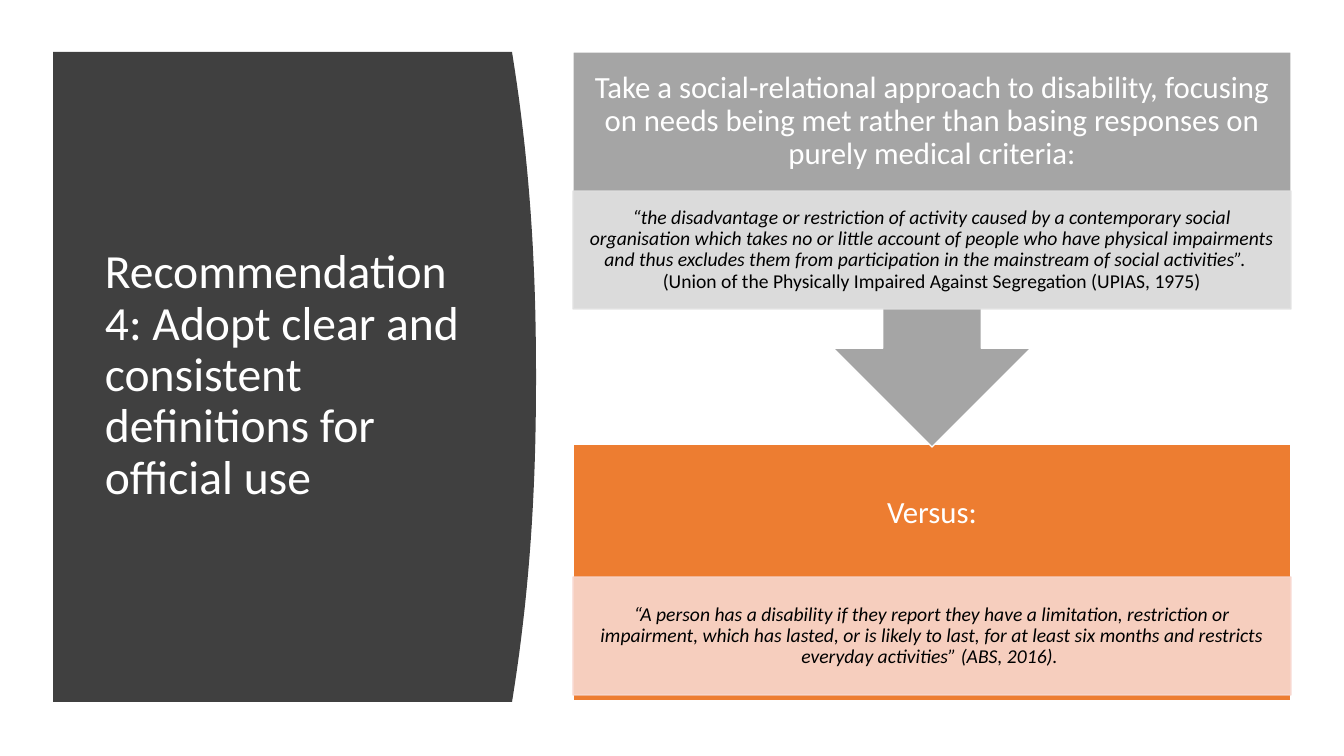
from dataclasses import dataclass

from lxml import etree
from pptx import Presentation
from pptx import util as u
from pptx.dml.color import RGBColor
from pptx.enum import shapes, text
from pptx.oxml import ns

EMU_PER_INCH = 914400
PX_PER_INCH = 100.8


@dataclass(frozen=True)
class Theme:
    """Colours, font and type sizes of the slide."""
    font: str = "Calibri"
    title_size: int = 34
    heading_size: int = 22
    quote_size: int = 14
    white: str = "FFFFFF"
    black: str = "000000"
    charcoal: str = "404040"
    grey: str = "A5A5A5"
    pale_grey: str = "E1E1E1"
    orange: str = "ED7D31"
    pale_orange: str = "F8D7CE"


THEME = Theme()
COLUMN_LEFT, COLUMN_WIDTH = 573, 718
HEADING_HEIGHT, QUOTE_HEIGHT = 139, 118


def px(length):
    """Turn pixels into EMU."""
    return u.Emu(round(length * EMU_PER_INCH / PX_PER_INCH))


def paint(shape, fill, line=None):
    """Give a shape a flat fill and an optional thin outline."""
    shape.shadow.inherit = False
    shape.fill.solid()
    shape.fill.fore_color.rgb = RGBColor.from_string(fill)
    if line:
        shape.line.color.rgb = RGBColor.from_string(line)
        shape.line.width = u.Pt(1)
    else:
        shape.line.fill.background()


def make_translucent(shape, percent):
    """Set the opacity of a shape's fill and outline."""
    for colour in shape._element.spPr.iter(ns.qn("a:srgbClr")):
        etree.SubElement(colour, ns.qn("a:alpha"), val=str(percent * 1000))


def write(shape, spans, size, colour, align, insets):
    """Write one paragraph of (words, italic) spans into a shape."""
    frame = shape.text_frame
    frame.word_wrap = True
    frame.vertical_anchor = text.MSO_ANCHOR.MIDDLE
    frame.margin_left = frame.margin_right = px(insets[0])
    frame.margin_top = frame.margin_bottom = px(insets[1])
    para = frame.paragraphs[0]
    para.alignment = align
    para.line_spacing = 0.9
    para.font.name = THEME.font
    para.font.size = u.Pt(size)
    para.font.color.rgb = RGBColor.from_string(colour)
    for words, italic in spans:
        span = para.add_run()
        span.text = words
        span.font.italic = italic


def add_block(page, kind, top, height, fill):
    """Add a column-wide shape with a white outline."""
    block = page.shapes.add_shape(
        kind, px(COLUMN_LEFT), px(top), px(COLUMN_WIDTH), px(height))
    paint(block, fill, THEME.white)
    return block


def add_heading(page, top, words):
    """Add a centred heading over a block."""
    box = page.shapes.add_textbox(
        px(COLUMN_LEFT), px(top), px(COLUMN_WIDTH), px(HEADING_HEIGHT))
    write(box, [(words, False)], THEME.heading_size, THEME.white,
          text.PP_ALIGN.CENTER, (17, 17))


def add_quote(page, top, fill, spans):
    """Add a pale band holding a quotation."""
    band = page.shapes.add_shape(
        shapes.MSO_SHAPE.RECTANGLE,
        px(COLUMN_LEFT), px(top), px(COLUMN_WIDTH), px(QUOTE_HEIGHT))
    paint(band, fill, fill)
    make_translucent(band, 90)
    write(band, spans, THEME.quote_size, THEME.black,
          text.PP_ALIGN.CENTER, (11, 2))


def add_title_panel(page):
    """Add the dark panel with a bowed right edge and the title on it."""
    left, top, bottom, corner, bulge, steps = 53, 52, 702, 512, 24, 40
    edge = []
    for step in range(steps + 1):
        offset = abs(2 * step / steps - 1)
        edge.append((px(corner + bulge * (1 - offset ** 2.2)),
                     px(top + (bottom - top) * step / steps)))
    outline = page.shapes.build_freeform(px(left), px(top))
    outline.add_line_segments(edge + [(px(left), px(bottom))], close=True)
    paint(outline.convert_to_shape(), THEME.charcoal)

    title = page.shapes.add_textbox(px(95), px(112), px(377), px(528))
    words = ("Recommendation 4: Adopt clear and consistent definitions "
             "for official use")
    write(title, [(words, False)], THEME.title_size, THEME.white,
          text.PP_ALIGN.LEFT, (10, 5))


def main():
    """Build and save the slide."""
    deck = Presentation()
    deck.slide_width, deck.slide_height = px(1344), px(756)
    page = deck.slides.add_slide(deck.slide_layouts[6])

    add_title_panel(page)

    add_block(page, shapes.MSO_SHAPE.RECTANGLE, 444, 257, THEME.orange)
    add_heading(page, 444, "Versus:")
    add_quote(page, 577, THEME.pale_orange, [
        ("“A person has a disability if they report they have a limitation, "
         "restriction or impairment, which has lasted, or is likely to last, "
         "for at least six months and restricts everyday activities” "
         "(ABS, 2016). ", True)])

    callout = add_block(
        page, shapes.MSO_SHAPE.UP_ARROW_CALLOUT, 52, 395, THEME.grey)
    callout.rotation = 180
    add_heading(page, 52, (
        "Take a social-relational approach to disability, focusing on needs "
        "being met rather than basing responses on purely medical criteria:"))
    add_quote(page, 191, THEME.pale_grey, [
        ("“the disadvantage or restriction of activity caused by a "
         "contemporary social organisation which takes no or little account "
         "of people who have physical impairments and thus excludes them from "
         "participation in the mainstream of social activities”. ", True),
        ("\t(Union of the Physically Impaired Against Segregation "
         "(UPIAS, 1975)", False)])

    deck.save("out.pptx")


if __name__ == "__main__":
    main()
